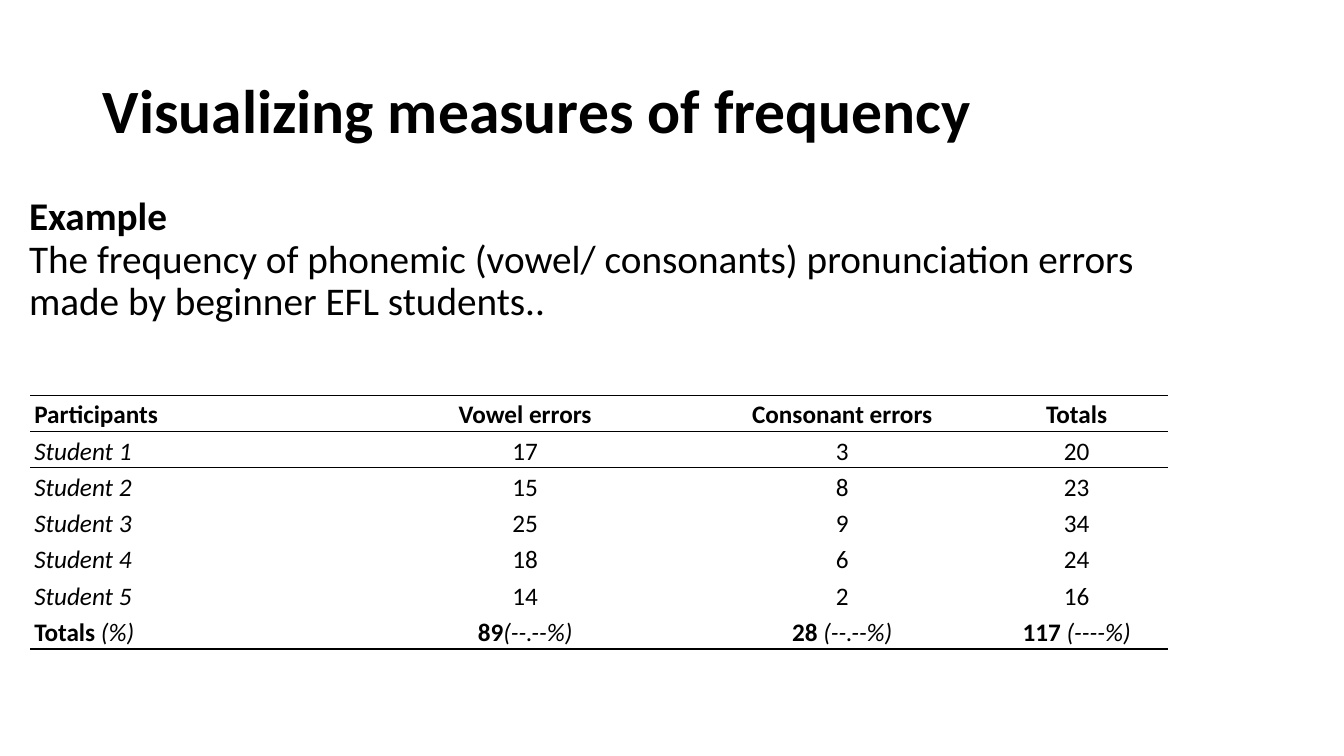
from typing import NamedTuple

from lxml.etree import SubElement
from pptx import Presentation
from pptx.dml.color import RGBColor
from pptx.enum.text import MSO_ANCHOR, PP_ALIGN
from pptx.oxml.ns import qn
from pptx.slide import Slide
from pptx.table import _Cell
from pptx.text.text import Font
from pptx.util import Emu, Pt

COLOURS = {"ink": "000000"}
FONT_NAME = "Calibri"
NO_GRID_STYLE = "{2D5ABB26-0587-4C30-8999-92F81FD0307C}"
COLUMN_WIDTHS = (306, 10, 346, 283, 182)
ROW_HEIGHT = 36


class Piece(NamedTuple):
    text: str
    bold: bool = False
    italic: bool = False


class Heading(NamedTuple):
    left: int
    top: int
    width: int
    height: int
    size: int
    lines: tuple[Piece, ...]


class ErrorRow(NamedTuple):
    participant: tuple[Piece, ...]
    vowels: tuple[Piece, ...]
    consonants: tuple[Piece, ...]
    total: tuple[Piece, ...]


HEADINGS = (
    Heading(19, 142, 1150, 233, 28, (
        Piece("Example", bold=True),
        Piece("The frequency of phonemic (vowel/ consonants) pronunciation errors "
              "made by beginner EFL students.."),
    )),
    Heading(92, 40, 1150, 145, 44, (Piece("Visualizing measures of frequency", bold=True),)),
)
STUDENT_ERRORS = ((17, 3, 20), (15, 8, 23), (25, 9, 34), (18, 6, 24), (14, 2, 16))
COLUMN_TITLES = ("Participants", "Vowel errors", "Consonant errors", "Totals")
TOTALS = (("Totals ", "(%)"), ("89", "(--.--%)"), ("28 ", "(--.--%)"), ("117 ", "(----%)"))

ERROR_ROWS = (
    ErrorRow(*((Piece(title, bold=True),) for title in COLUMN_TITLES)),
    *(ErrorRow((Piece(f"Student {number}", italic=True),),
               *((Piece(str(count)),) for count in counts))
      for number, counts in enumerate(STUDENT_ERRORS, 1)),
    ErrorRow(*((Piece(label, bold=True), Piece(share, italic=True)) for label, share in TOTALS)),
)


def px(length: int) -> Emu:
    """Convert px to EMU at 100 px to the inch."""
    return Emu(length * 9144)


def style_font(font: Font, size: int) -> None:
    font.name = FONT_NAME
    font.size = Pt(size)
    font.color.rgb = RGBColor.from_string(COLOURS["ink"])


def add_heading(slide: Slide, heading: Heading) -> None:
    frame = slide.shapes.add_textbox(
        px(heading.left), px(heading.top), px(heading.width), px(heading.height)).text_frame
    frame.word_wrap = True
    frame.vertical_anchor = MSO_ANCHOR.MIDDLE
    paragraph = frame.paragraphs[0]
    paragraph.line_spacing = 0.9
    style_font(paragraph.font, heading.size)
    for index, line in enumerate(heading.lines):
        if index:
            paragraph.add_line_break()
        run = paragraph.add_run()
        run.text = line.text
        run.font.bold = line.bold


def add_rule(cell: _Cell, side: str) -> None:
    """Draw a 1 pt border on one side: lnT or lnB."""
    border = SubElement(cell._tc.get_or_add_tcPr(), qn(f"a:{side}"), w=str(Pt(1)))
    fill = SubElement(border, qn("a:solidFill"))
    SubElement(fill, qn("a:srgbClr"), val=COLOURS["ink"])


def fill_cell(cell: _Cell, pieces: tuple[Piece, ...], alignment: PP_ALIGN) -> None:
    cell.margin_left = cell.margin_right = px(4)
    cell.margin_top = cell.margin_bottom = 0
    paragraph = cell.text_frame.paragraphs[0]
    paragraph.alignment = alignment
    paragraph.line_spacing = 1.15
    style_font(paragraph.font, 18)
    for piece in pieces:
        run = paragraph.add_run()
        run.text = piece.text
        run.font.bold = piece.bold
        run.font.italic = piece.italic


def add_error_table(slide: Slide) -> None:
    table = slide.shapes.add_table(
        len(ERROR_ROWS), len(COLUMN_WIDTHS), px(30), px(392),
        px(sum(COLUMN_WIDTHS)), px(ROW_HEIGHT * len(ERROR_ROWS))).table
    table.first_row = table.horz_banding = False
    table._tbl.tblPr.find(qn("a:tableStyleId")).text = NO_GRID_STYLE
    for column, width in zip(table.columns, COLUMN_WIDTHS):
        column.width = px(width)
    last = len(ERROR_ROWS) - 1
    for index, (row, errors) in enumerate(zip(table.rows, ERROR_ROWS)):
        row.height = px(ROW_HEIGHT)
        spaced_cells = (errors.participant, (), *errors[1:])
        for column, (cell, pieces) in enumerate(zip(row.cells, spaced_cells)):
            fill_cell(cell, pieces, PP_ALIGN.CENTER if column else PP_ALIGN.LEFT)
            if index in (0, 1):
                add_rule(cell, "lnT")
            if index in (0, last):
                add_rule(cell, "lnB")
            cell.fill.background()


def main() -> None:
    presentation = Presentation()
    presentation.slide_width, presentation.slide_height = px(1333), px(750)
    slide = presentation.slides.add_slide(presentation.slide_layouts[6])
    example, title = HEADINGS
    add_heading(slide, example)
    add_error_table(slide)
    add_heading(slide, title)
    presentation.save("out.pptx")


if __name__ == "__main__":
    main()
